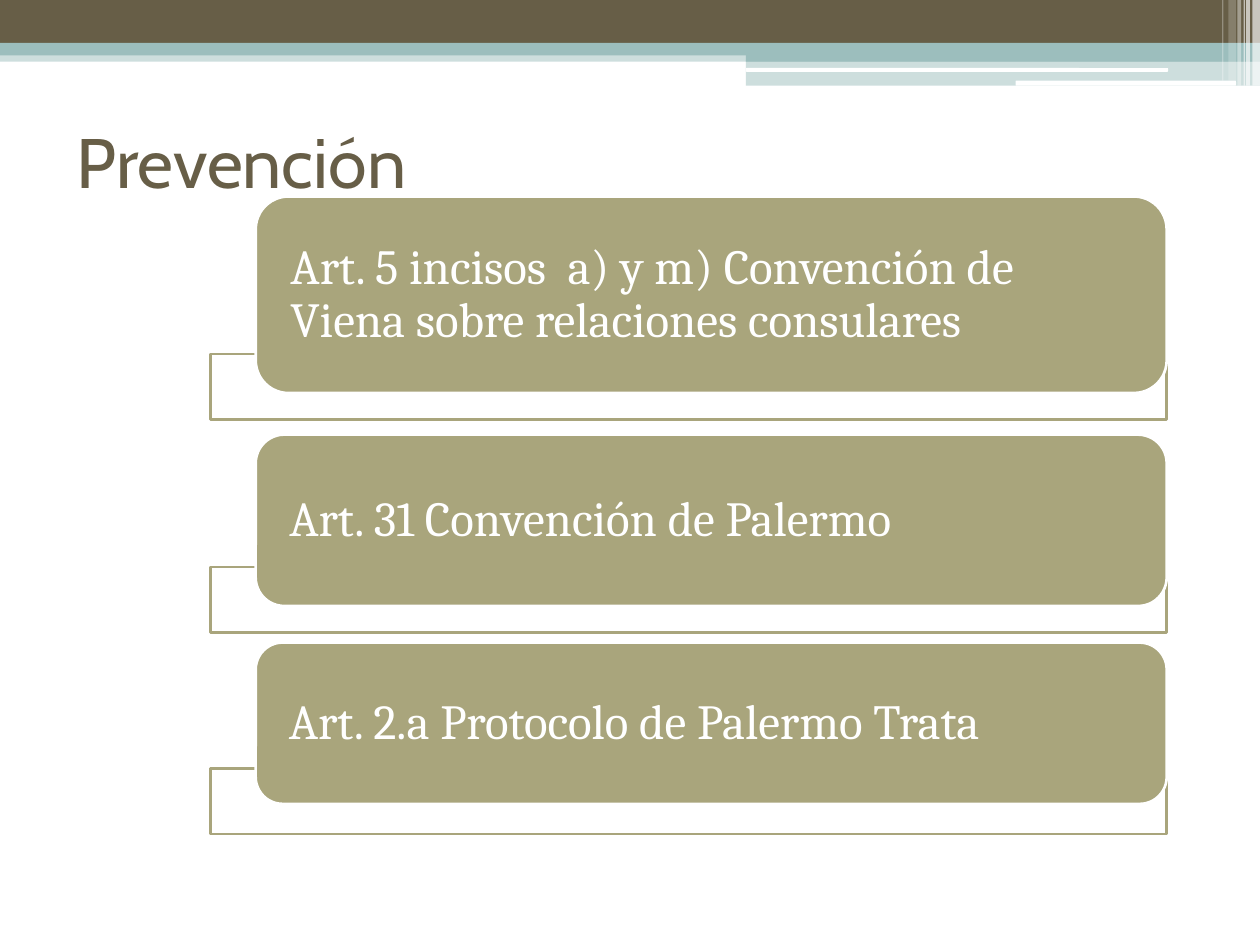
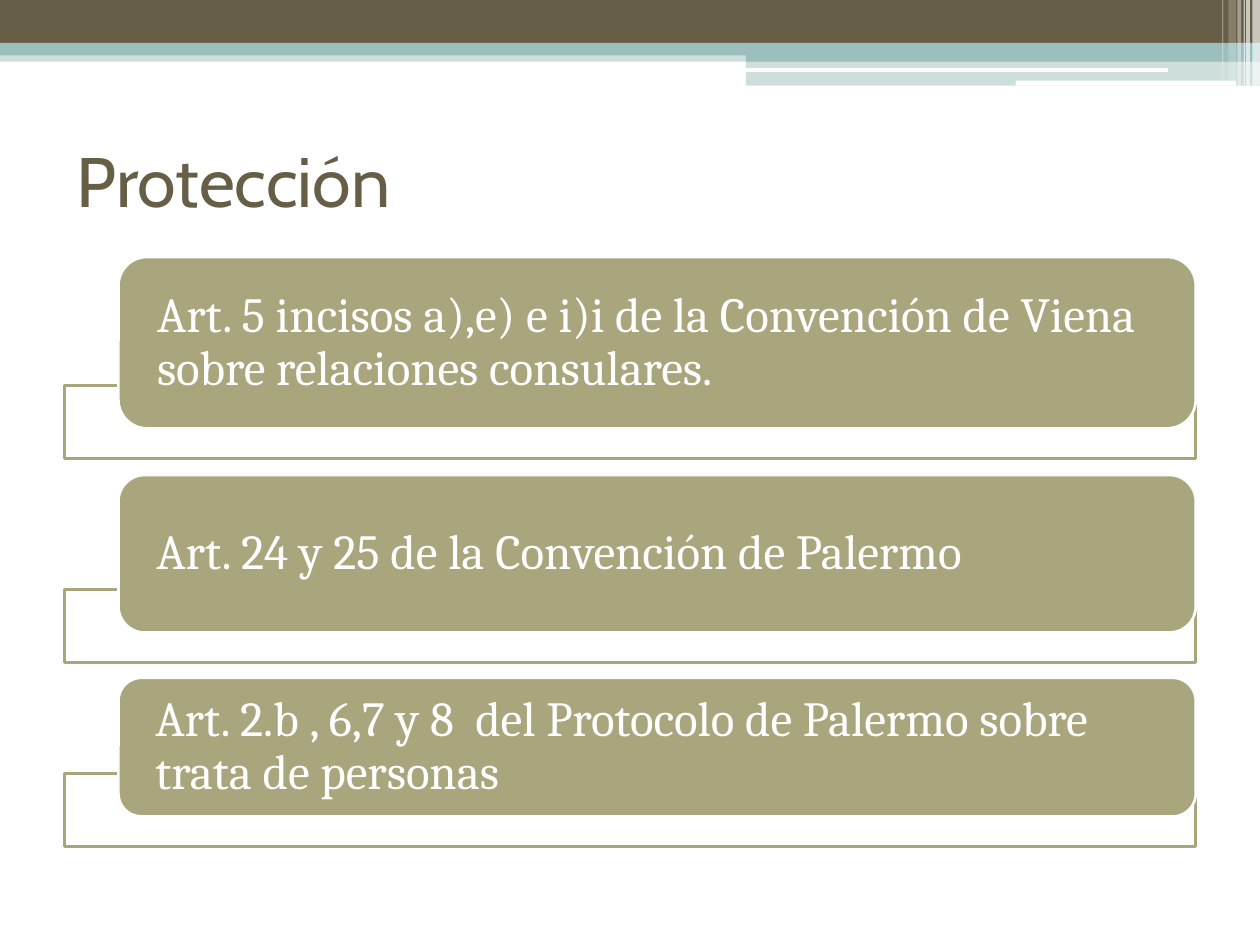
from lxml import etree
from pptx import Presentation
from pptx.dml.color import RGBColor
from pptx.enum.shapes import MSO_SHAPE
from pptx.enum.text import MSO_ANCHOR, PP_ALIGN
from pptx.oxml.ns import qn
from pptx.util import Inches, Pt

RECT, ROUND = MSO_SHAPE.RECTANGLE, MSO_SHAPE.ROUNDED_RECTANGLE
MIDDLE, LEFT = MSO_ANCHOR.MIDDLE, PP_ALIGN.LEFT
BROWN, TEAL, OLIVE, WHITE = "675E47", "9CBEBD", "A9A57C", "FFFFFF"
TITLE_FONT = dict(name="Cabin", size=Pt(40), bold=False)
CARD_FONT = dict(name="Cambria", size=Pt(28))
W, H = 10, 7.5
TITLE_ONLY = 5


def add_box(s, kind, box, fill, alpha=100, line=None):
    """Add a flat shape; alpha is the opacity of its fill in percent."""
    sp = s.shapes.add_shape(kind, *[Inches(v) for v in box])
    sp.shadow.inherit = False
    sp.fill.solid()
    sp.fill.fore_color.rgb = RGBColor.from_string(fill)
    if alpha < 100:
        clr = sp.element.spPr.find(qn("a:solidFill"))[0]
        etree.SubElement(clr, qn("a:alpha")).set("val", str(alpha * 1000))
    if line:
        sp.line.color.rgb = RGBColor.from_string(line)
        sp.line.width = Pt(1.5)
    else:
        sp.line.fill.background()
    return sp


def write(sp, text, font, color):
    """Write one left-aligned, vertically centred paragraph."""
    tf = sp.text_frame
    tf.word_wrap = True
    tf.vertical_anchor = MIDDLE
    p = tf.paragraphs[0]
    p.alignment = LEFT
    r = p.add_run()
    r.text = text
    for key, value in font.items():
        setattr(r.font, key, value)
    r.font.color.rgb = RGBColor.from_string(color)
    return tf


prs = Presentation()
prs.slide_width, prs.slide_height = Inches(W), Inches(H)
layout = prs.slide_layouts[TITLE_ONLY]
for ph in list(layout.placeholders)[1:]:
    ph.element.getparent().remove(ph.element)

# Header bands: kind, box, colour, opacity
TAB = 5.92
bands = [
    (RECT, (0, 0.4, W, 0.09), TEAL, 50),
    (RECT, (0, 0, W, 0.34), BROWN, 100),
    (RECT, (0, 0.34, W, 0.1), TEAL, 100),
    (RECT, (TAB, 0.39, W - TAB, 0.1), TEAL, 100),
    (RECT, (TAB, 0.48, W - TAB, 0.2), TEAL, 50),
    (ROUND, (TAB, 0.54, 3.35, 0.03), WHITE, 100),
    (ROUND, (8.06, 0.64, 1.75, 0.04), WHITE, 100),
]
# Thin vertical stripes at the right end: left, width, height, opacity
stripes = [(9.94, 0.06, 0.68, 65), (9.89, 0.03, 0.68, 65), (9.87, 0.01, 0.68, 60),
           (9.82, 0.03, 0.68, 40), (9.75, 0.06, 0.64, 20), (9.7, 0.01, 0.64, 30)]
bands += [(RECT, (x, 0, w, h), WHITE, alpha) for x, w, h, alpha in stripes]

# Slide contents; each row is card top, card height, frame top, text
slides = [
    dict(title="Prevención", title_top=0.76, title_height=1.02,
         left=1.67, width=7.59, indent=0.36, frame_height=0.52, inset=0.2, rows=[
             (1.56, 1.56, 2.81, "Art. 5 incisos  a) y m) Convención de Viena sobre relaciones consulares"),
             (3.45, 1.36, 4.5, "Art. 31 Convención de Palermo"),
             (5.1, 1.28, 6.1, "Art. 2.a Protocolo de Palermo Trata")]),
    dict(title="Protección", title_top=0.84, title_height=1.17,
         left=0.51, width=8.98, indent=0.43, frame_height=0.58, inset=0.24, rows=[
             (2.04, 1.36, 3.06, "Art. 5 incisos a),e) e i)i de la Convención de Viena sobre relaciones consulares."),
             (3.77, 1.25, 4.68, "Art. 24 y 25 de la Convención de Palermo"),
             (5.38, 1.1, 6.14, "Art. 2.b , 6,7 y 8  del Protocolo de Palermo sobre trata de personas")]),
]

for number, d in enumerate(slides):
    s = prs.slides.add_slide(layout)

    # Bands are drawn once and moved to the shared layout
    if number == 0:
        for i, (kind, box, color, alpha) in enumerate(bands):
            band = add_box(s, kind, box, color, alpha)
            band.element.nvSpPr.cNvPr.id = 100 + i
            layout.shapes.element.append(band.element)

    # Title
    title = s.shapes.title
    title.left, title.top = Inches(0.51), Inches(d["title_top"])
    title.width, title.height = Inches(9), Inches(d["title_height"])
    write(title, d["title"], TITLE_FONT, BROWN)

    # Cards, each over its outlined frame
    left, width, indent = d["left"], d["width"], d["indent"]
    for card_top, card_height, frame_top, text in d["rows"]:
        add_box(s, RECT, (left, frame_top, width, d["frame_height"]), WHITE, 90, OLIVE)
        card = add_box(s, ROUND, (left + indent, card_top, width - indent, card_height),
                       OLIVE, line=WHITE)
        tf = write(card, text, CARD_FONT, WHITE)
        tf.margin_left = tf.margin_right = Inches(d["inset"])
        tf.margin_top = tf.margin_bottom = 0
        tf.paragraphs[0].line_spacing = 0.9

prs.save("out.pptx")
